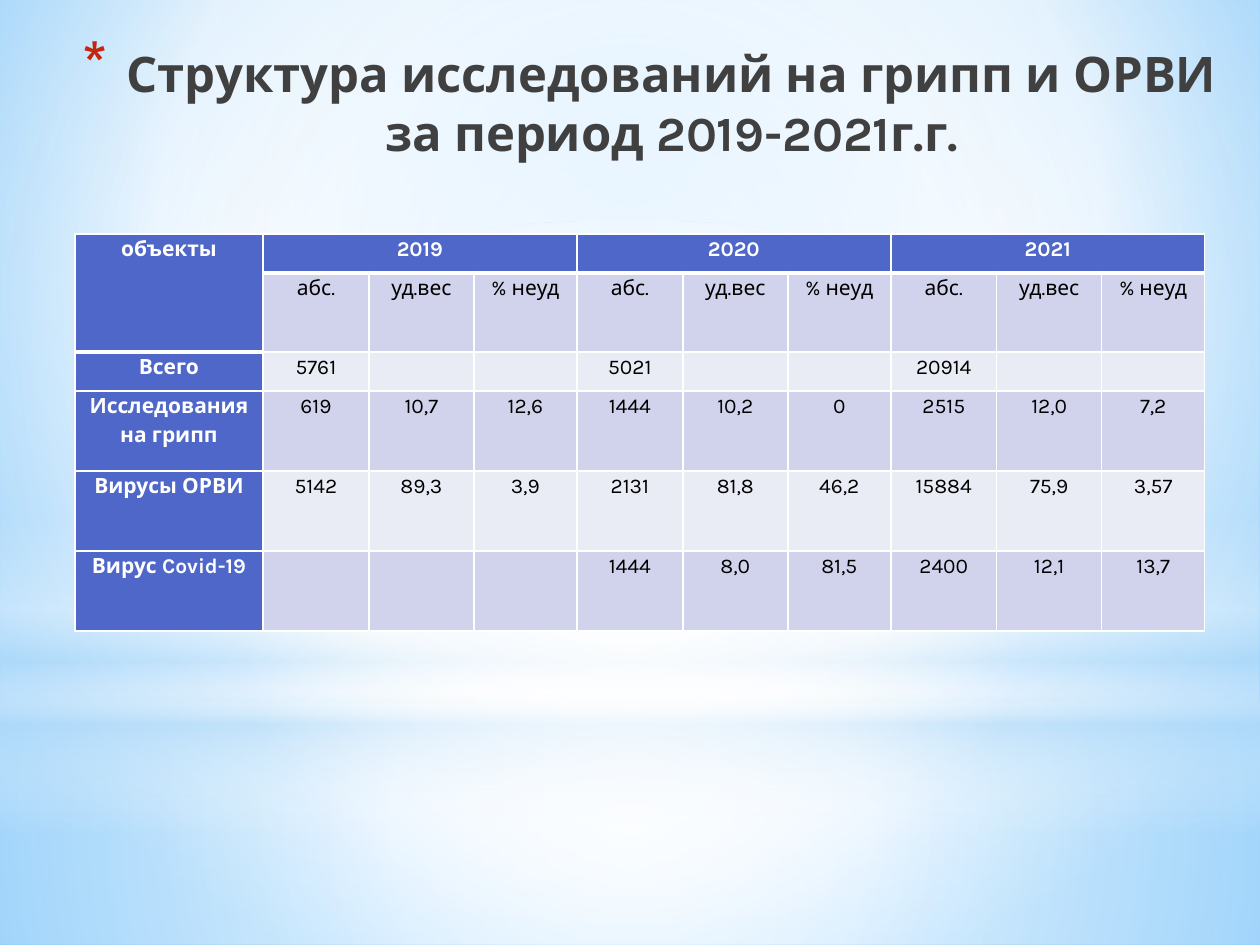
import pptx
import pptx.dml.color
import pptx.enum.shapes
import pptx.enum.text
import pptx.oxml
import pptx.oxml.ns
import pptx.util

EMU_PER_PX = 914400 / 126
FONT = "Karla"
WHITE, BLACK, DARK = "FFFFFF", "000000", "404040"
PALE_BLUE, HEADER_BLUE, BULLET_RED = "B4DCFA", "4E67C8", "C3260C"
BANDS = ("D0D3EB", "E9EBF5")

YEARS = ("2019", "2020", "2021")
MEASURES = ("абс.", "уд.вес", "% неуд")
RESULTS = (
    ("Всего", "5761", "", "", "5021", "", "", "20914", "", ""),
    ("Исследования на грипп", "619", "10,7", "12,6", "1444", "10,2", "0",
     "2515", "12,0", "7,2"),
    ("Вирусы ОРВИ", "5142", "89,3", "3,9", "2131", "81,8", "46,2",
     "15884", "75,9", "3,57"),
    ("Вирус Covid-19", "", "", "", "1444", "8,0", "81,5",
     "2400", "12,1", "13,7"),
)
LABEL_WIDTH = 188
MEASURE_WIDTHS = (106, 105, 103)
ROW_HEIGHTS = (39, 79, 39, 80, 80, 80)


def px(length):
    return pptx.util.Emu(round(length * EMU_PER_PX))


def rgb(color):
    return pptx.dml.color.RGBColor.from_string(color)


def parse(xml):
    """Parse one drawing element, adding the namespace it needs."""
    tag, rest = xml.split(" ", 1)
    return pptx.oxml.parse_xml(f"{tag} {pptx.oxml.ns.nsdecls('a')} {rest}")


def add_text(paragraph, text, size=12, color=BLACK, bold=False, line_spacing=None):
    paragraph.alignment = pptx.enum.text.PP_ALIGN.CENTER
    paragraph.line_spacing = line_spacing
    if not text:
        paragraph._p.append(parse(f'<a:endParaRPr sz="{size * 100}"/>'))
        return
    run = paragraph.add_run()
    run.text = text
    run.font.name = FONT
    run.font.size = pptx.util.Pt(size)
    run.font.bold = bold
    run.font.color.rgb = rgb(color)


def fill_gradient(owner, fill, stops, center=None, angle=0):
    """Fill with (position, color, opacity) stops, round a center or along an angle."""
    fill.solid()
    stop_xml = "".join(
        f'<a:gs pos="{position * 1000}"><a:srgbClr val="{color}">'
        f'<a:alpha val="{opacity * 1000}"/></a:srgbClr></a:gs>'
        for position, color, opacity in stops)
    if center:
        left, top, right, bottom = (side * 1000 for side in center)
        direction = (f'<a:path path="circle"><a:fillToRect l="{left}" t="{top}" '
                     f'r="{right}" b="{bottom}"/></a:path>')
    else:
        direction = f'<a:lin ang="{angle * 60000}" scaled="0"/>'
    gradient = parse(f'<a:gradFill rotWithShape="1"><a:gsLst>{stop_xml}</a:gsLst>'
                     f'{direction}</a:gradFill>')
    solid = owner.element.xpath(
        "./p:spPr/a:solidFill | ./p:cSld/p:bg/p:bgPr/a:solidFill")[0]
    solid.getparent().replace(solid, gradient)


def add_glow(slide, kind, box, stops, **direction):
    shape = slide.shapes.add_shape(kind, *map(px, box))
    shape.shadow.inherit = False
    shape.line.fill.background()
    fill_gradient(shape, shape.fill, stops, **direction)


def add_backdrop(slide, left, top, width, height):
    """Lay the sky gradient and its translucent light bands."""
    rectangle = pptx.enum.shapes.MSO_SHAPE.RECTANGLE
    oval = pptx.enum.shapes.MSO_SHAPE.OVAL
    middle = (50, 50, 50, 50)
    horizon = 703
    fill_gradient(slide, slide.background.fill,
                  ((0, "9ED5FF", 100), (60, WHITE, 100), (100, "5BB9FF", 100)),
                  center=(20, 10, 20, 60))
    add_glow(slide, rectangle, (left, top + horizon, width, height - horizon),
             ((0, WHITE, 91), (37, WHITE, 76), (100, PALE_BLUE, 79)), center=middle)
    add_glow(slide, rectangle, (left, top, width, horizon),
             ((0, WHITE, 89), (48, WHITE, 62), (100, PALE_BLUE, 79)), center=middle)
    add_glow(slide, rectangle, (left, top + 519, width, 315),
             ((0, WHITE, 0), (29, WHITE, 30), (45, PALE_BLUE, 40),
              (55, WHITE, 26), (65, PALE_BLUE, 60), (100, WHITE, 0)), angle=90)
    add_glow(slide, oval, (left, top + 221, width, horizon),
             ((0, WHITE, 100), (56, WHITE, 0)), center=middle)


def add_title(slide, left, top, width, height):
    box = slide.shapes.add_textbox(*map(px, (left, top, width, height)))
    box.text_frame.word_wrap = True
    paragraph = box.text_frame.paragraphs[0]
    add_text(paragraph, "Структура исследований на грипп и ОРВИ за период 2019-2021г.г.",
             size=28, color=DARK, bold=True)
    properties = paragraph._p.get_or_add_pPr()
    properties.set("marL", str(px(44)))
    properties.set("indent", str(px(-44)))
    for bullet in (f'<a:buClr ><a:srgbClr val="{BULLET_RED}"/></a:buClr>',
                   '<a:buSzPct val="128000"/>', '<a:buChar char="*"/>'):
        properties.append(parse(bullet))


def set_borders(cell, **widths):
    """Draw white borders, 1 pt unless a side (L, R, T, B) says otherwise."""
    properties = cell._tc.get_or_add_tcPr()
    for side in "LRTB":
        width = pptx.util.Pt(widths.get(side, 1))
        properties.append(parse(
            f'<a:ln{side} w="{width}"><a:solidFill><a:srgbClr val="{WHITE}"/>'
            f'</a:solidFill></a:ln{side}>'))


def format_cell(cell, text, row, column):
    is_header = row == 0 or column == 0
    heavy_top = row == (2 if column == 0 else 1)
    heavy_bottom = row == 0 or (row == 1 and column == 0)
    set_borders(cell, T=3 if heavy_top else 1, B=3 if heavy_bottom else 1)
    cell.fill.solid()
    cell.fill.fore_color.rgb = rgb(HEADER_BLUE if is_header else BANDS[(row + 1) % 2])
    cell.margin_left = cell.margin_right = px(9)
    cell.margin_top = cell.margin_bottom = 0
    add_text(cell.text_frame.paragraphs[0], text, bold=is_header,
             color=WHITE if is_header else BLACK, line_spacing=1.15)


def add_results_table(slide, left, top):
    widths = (LABEL_WIDTH,) + MEASURE_WIDTHS * len(YEARS)
    group = len(MEASURES)
    year_row = ["объекты"]
    for year in YEARS:
        year_row += [year] + [""] * (group - 1)
    rows = (year_row, ("",) + MEASURES * len(YEARS)) + RESULTS
    frame = slide.shapes.add_table(len(rows), len(widths), px(left), px(top),
                                   px(sum(widths)), px(sum(ROW_HEIGHTS)))
    table = frame.table
    table.first_row = table.horz_banding = False
    for column, width in zip(table.columns, widths):
        column.width = px(width)
    for table_row, height in zip(table.rows, ROW_HEIGHTS):
        table_row.height = px(height)
    for row, texts in enumerate(rows):
        for column, text in enumerate(texts):
            format_cell(table.cell(row, column), text, row, column)
    table.cell(0, 0).merge(table.cell(1, 0))
    for first in range(1, len(widths), group):
        table.cell(0, first).merge(table.cell(0, first + group - 1))


def main():
    presentation = pptx.Presentation()
    presentation.slide_width, presentation.slide_height = px(1260), px(945)
    slide = presentation.slides.add_slide(presentation.slide_layouts[6])
    add_backdrop(slide, 0, 0, 1260, 945)
    add_title(slide, 54, 37, 1191, 89)
    add_results_table(slide, 75, 234)
    presentation.save("out.pptx")


if __name__ == "__main__":
    main()
